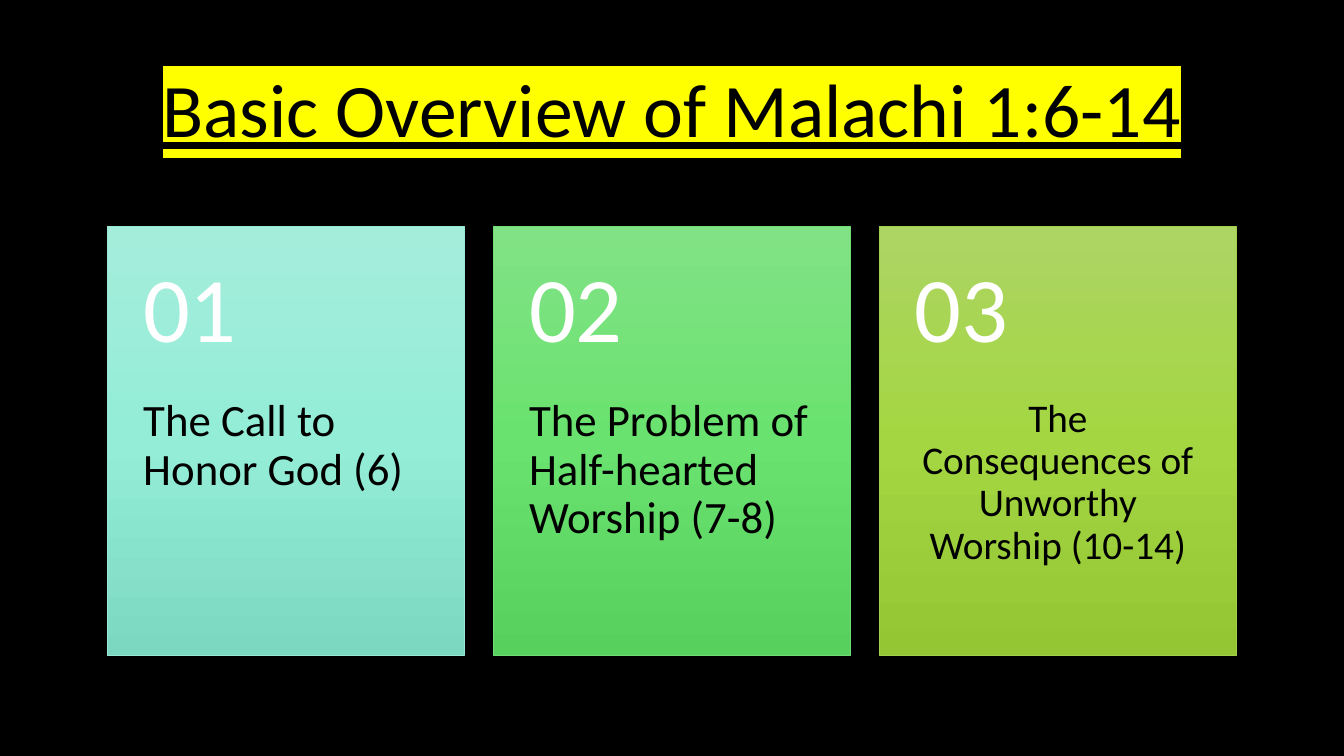
import copy
from dataclasses import dataclass

import lxml.etree
import pptx
import pptx.dml.color
import pptx.enum.shapes
import pptx.enum.text
import pptx.oxml.ns
import pptx.slide
import pptx.text.text
import pptx.util

RGBColor = pptx.dml.color.RGBColor
Align = pptx.enum.text.PP_ALIGN
Anchor = pptx.enum.text.MSO_ANCHOR
qn = pptx.oxml.ns.qn

BLACK = RGBColor(0x00, 0x00, 0x00)
WHITE = RGBColor(0xFF, 0xFF, 0xFF)
YELLOW = RGBColor(0xFF, 0xFF, 0x00)
AQUA = (RGBColor(0xA4, 0xED, 0xDB), RGBColor(0x93, 0xED, 0xD7), RGBColor(0x7D, 0xD8, 0xC2))
AQUA_EDGE = RGBColor(0x97, 0xE9, 0xD5)
GREEN = (RGBColor(0x81, 0xE2, 0x85), RGBColor(0x6A, 0xE2, 0x6F), RGBColor(0x57, 0xD0, 0x5D))
GREEN_EDGE = RGBColor(0x6F, 0xDD, 0x74)
LIME = (RGBColor(0xAC, 0xD5, 0x64), RGBColor(0xA4, 0xD6, 0x42), RGBColor(0x94, 0xC5, 0x33))
LIME_EDGE = RGBColor(0xA2, 0xCF, 0x49)

FONT = "Calibri"
SLIDE_WIDTH = pptx.util.Inches(13.33)
SLIDE_HEIGHT = pptx.util.Inches(7.5)
ROW = SLIDE_HEIGHT / 30
GAP_SHARE = 0.08
CARD_WIDTH = SLIDE_WIDTH * 0.84 / (3 + 2 * GAP_SHARE)
CARD_LEFT = SLIDE_WIDTH * 0.08
CARD_TOP = 9 * ROW
CARD_HEIGHT = 17 * ROW
NUMBER_HEIGHT = CARD_HEIGHT * 0.4
SIDE_INSET = int(CARD_WIDTH * 0.1)


@dataclass(frozen=True)
class Box:
    left: float
    top: float
    width: float
    height: float

    def place(self) -> tuple[int, int, int, int]:
        return int(self.left), int(self.top), int(self.width), int(self.height)


@dataclass(frozen=True)
class Card:
    text: str
    gradient: tuple[RGBColor, RGBColor, RGBColor]
    edge: RGBColor
    size: int = 32
    alignment: Align = Align.LEFT


CARDS = (
    Card("The Call to Honor God (6)", AQUA, AQUA_EDGE),
    Card("The Problem of Half-hearted Worship (7-8)", GREEN, GREEN_EDGE),
    Card("The Consequences of Unworthy Worship (10-14)", LIME, LIME_EDGE, 28, Align.CENTER),
)


def format_paragraph(
    paragraph: pptx.text.text._Paragraph, size: int, color: RGBColor, alignment: Align
) -> None:
    paragraph.alignment = alignment
    paragraph.line_spacing = 0.9
    paragraph.font.name = FONT
    paragraph.font.size = pptx.util.Pt(size)
    paragraph.font.color.rgb = color


def add_title(slide: pptx.slide.Slide, text: str) -> None:
    title = slide.shapes.title
    box = Box(SLIDE_WIDTH * 0.07, 1.6 * ROW, SLIDE_WIDTH * 0.86, 5.8 * ROW)
    title.left, title.top, title.width, title.height = box.place()
    frame = title.text_frame
    frame.auto_size = pptx.enum.text.MSO_AUTO_SIZE.NONE
    frame.vertical_anchor = Anchor.MIDDLE
    frame.text = text
    paragraph = frame.paragraphs[0]
    format_paragraph(paragraph, 54, BLACK, Align.CENTER)
    paragraph.font.underline = True
    properties = paragraph.runs[0]._r.get_or_add_rPr()
    highlight = lxml.etree.SubElement(properties, qn("a:highlight"))
    lxml.etree.SubElement(highlight, qn("a:srgbClr")).set("val", str(YELLOW))


def add_panel(slide: pptx.slide.Slide, box: Box, card: Card) -> None:
    panel = slide.shapes.add_shape(pptx.enum.shapes.MSO_SHAPE.RECTANGLE, *box.place())
    panel.shadow.inherit = False
    panel.line.color.rgb = card.edge
    panel.line.width = pptx.util.Pt(0.5)
    panel.fill.gradient()
    panel.fill.gradient_angle = 270
    stop_list = panel._element.spPr.find(".//" + qn("a:gsLst"))
    stop_list.append(copy.deepcopy(stop_list[0]))
    for index, (stop, color) in enumerate(zip(panel.fill.gradient_stops, card.gradient)):
        stop.position = index / 2
        stop.color.rgb = color


def add_label(
    slide: pptx.slide.Slide,
    box: Box,
    text: str,
    size: int,
    color: RGBColor,
    alignment: Align = Align.LEFT,
    anchor: Anchor = Anchor.TOP,
) -> None:
    frame = slide.shapes.add_textbox(*box.place()).text_frame
    frame.word_wrap = True
    frame.vertical_anchor = anchor
    frame.margin_left = frame.margin_right = SIDE_INSET
    frame.margin_top = frame.margin_bottom = 0
    frame.text = text
    format_paragraph(frame.paragraphs[0], size, color, alignment)


def add_card(slide: pptx.slide.Slide, index: int, card: Card) -> None:
    left = CARD_LEFT + index * CARD_WIDTH * (1 + GAP_SHARE)
    add_panel(slide, Box(left, CARD_TOP, CARD_WIDTH, CARD_HEIGHT), card)
    body = Box(left, CARD_TOP + NUMBER_HEIGHT, CARD_WIDTH, CARD_HEIGHT - NUMBER_HEIGHT)
    add_label(slide, body, card.text, card.size, BLACK, card.alignment)
    number = Box(left, CARD_TOP, CARD_WIDTH, NUMBER_HEIGHT)
    add_label(slide, number, f"{index + 1:02}", 66, WHITE, anchor=Anchor.MIDDLE)


def main() -> None:
    presentation = pptx.Presentation()
    presentation.slide_width = SLIDE_WIDTH
    presentation.slide_height = SLIDE_HEIGHT
    slide = presentation.slides.add_slide(presentation.slide_layouts.get_by_name("Title Only"))
    slide.background.fill.solid()
    slide.background.fill.fore_color.rgb = BLACK
    add_title(slide, "Basic Overview of Malachi 1:6-14")
    for index, card in enumerate(CARDS):
        add_card(slide, index, card)
    presentation.save("out.pptx")


if __name__ == "__main__":
    main()
